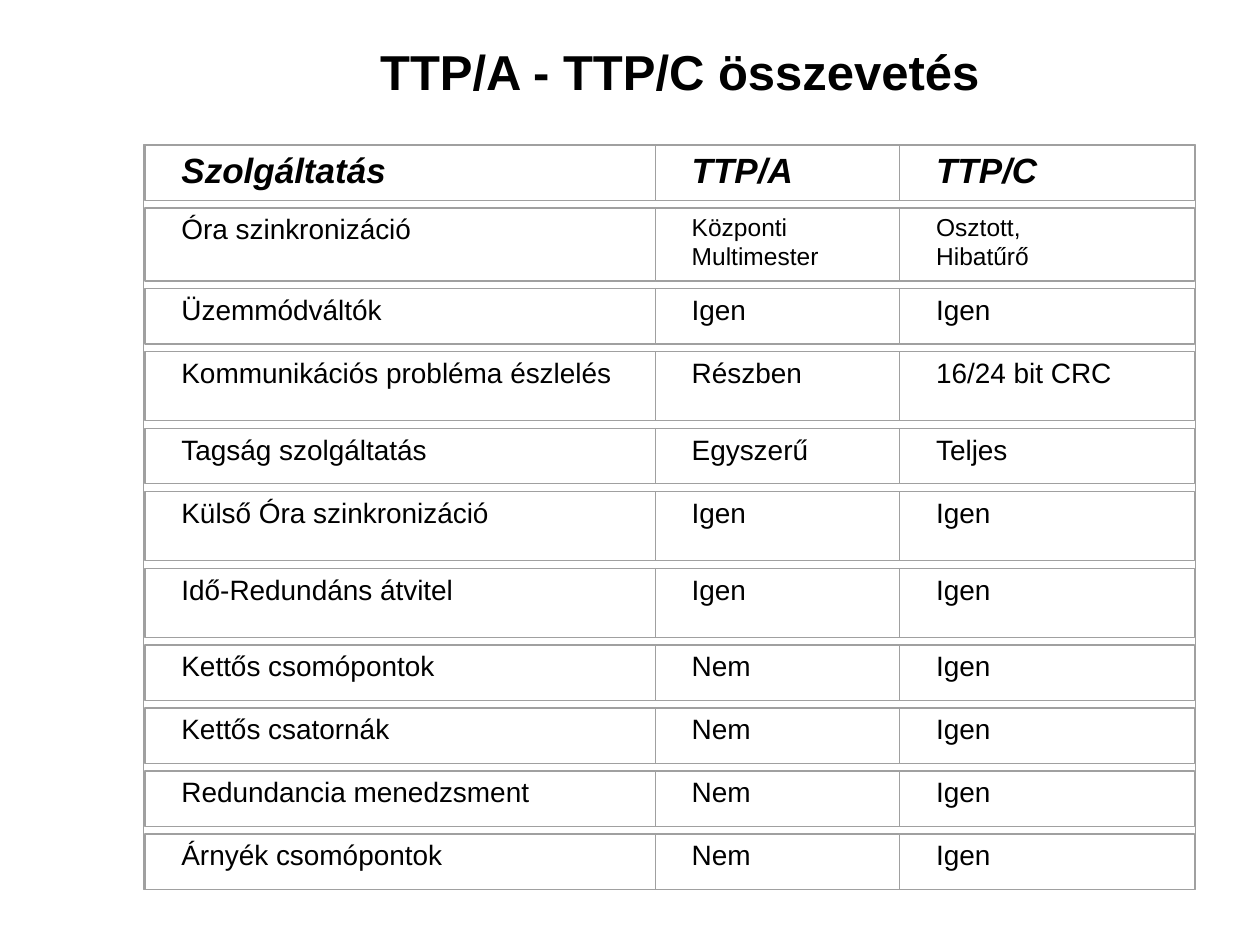
from dataclasses import dataclass

from pptx import Presentation
from pptx.dml.color import RGBColor
from pptx.enum.shapes import MSO_SHAPE as Preset
from pptx.enum.text import MSO_AUTO_SIZE as AutoSize, PP_ALIGN as Align
from pptx.util import Inches, Pt

BLACK = RGBColor(0x00, 0x00, 0x00)
GRAY = RGBColor(0xA0, 0xA0, 0xA0)
FONT = "Arial"

LEFT, TOP = 1.15, 1.15
COLUMN_WIDTHS = (4.05, 1.94, 2.34)
ROW_GAP = 0.06
LOW, TALL, TWO_LINE = 0.44, 0.55, 0.58
PAD_X, PAD_Y = 0.09, 0.03
TEXT_INDENT = 0.2


@dataclass(frozen=True)
class Box:
    left: float
    top: float
    width: float
    height: float

    def lengths(self) -> list:
        return [Inches(v) for v in (self.left, self.top, self.width, self.height)]

    def padded(self) -> "Box":
        return Box(self.left + PAD_X, self.top + PAD_Y,
                   self.width - 2 * PAD_X, self.height - 2 * PAD_Y)


@dataclass(frozen=True)
class Style:
    size: int
    bold: bool = False
    italic: bool = False


@dataclass(frozen=True)
class Service:
    name: str
    ttp_a: str
    ttp_c: str
    height: float = LOW
    name_style: Style = Style(16)
    value_style: Style = Style(16)

    def cells(self) -> tuple:
        return ((self.name, self.name_style),
                (self.ttp_a, self.value_style),
                (self.ttp_c, self.value_style))


TITLE = Style(28, bold=True)
HEADING = Style(20, bold=True, italic=True)

SERVICES = (
    Service("Szolgáltatás", "TTP/A", "TTP/C", LOW, HEADING, HEADING),
    Service("Óra szinkronizáció", "Központi\nMultimester", "Osztott,\nHibatűrő",
            TWO_LINE, value_style=Style(14)),
    Service("Üzemmódváltók", "Igen", "Igen"),
    Service("Kommunikációs probléma észlelés", "Részben", "16/24 bit CRC", TALL),
    Service("Tagság szolgáltatás", "Egyszerű", "Teljes"),
    Service("Külső Óra szinkronizáció", "Igen", "Igen", TALL),
    Service("Idő-Redundáns átvitel", "Igen", "Igen", TALL),
    Service("Kettős csomópontok", "Nem", "Igen"),
    Service("Kettős csatornák", "Nem", "Igen"),
    Service("Redundancia menedzsment", "Nem", "Igen"),
    Service("Árnyék csomópontok", "Nem", "Igen"),
)


def add_frame(shapes, box: Box, line_width: float) -> None:
    frame = shapes.add_shape(Preset.RECTANGLE, *box.lengths())
    frame.shadow.inherit = False
    frame.fill.background()
    frame.line.color.rgb = GRAY
    frame.line.width = Pt(line_width)


def add_text(shapes, box: Box, text: str, style: Style, align: Align = Align.LEFT):
    body = shapes.add_textbox(*box.lengths()).text_frame
    body.word_wrap = True
    for index, line in enumerate(text.split("\n")):
        paragraph = body.add_paragraph() if index else body.paragraphs[0]
        paragraph.alignment = align
        run = paragraph.add_run()
        run.text = line
        run.font.name = FONT
        run.font.size = Pt(style.size)
        run.font.bold = style.bold
        run.font.italic = style.italic
        run.font.color.rgb = BLACK
    return body


def add_cell(shapes, box: Box, text: str, style: Style) -> None:
    body = add_text(shapes, box.padded(), text, style)
    body.margin_left = Inches(TEXT_INDENT)
    body.margin_top = body.margin_right = body.margin_bottom = 0
    add_frame(shapes, box, 0)


def add_comparison(shapes) -> None:
    top = TOP
    for service in SERVICES:
        left = LEFT
        for (text, style), width in zip(service.cells(), COLUMN_WIDTHS):
            add_cell(shapes, Box(left, top, width, service.height), text, style)
            left += width
        top += service.height + ROW_GAP
    add_frame(shapes, Box(1.14, TOP, 8.35, top - ROW_GAP - TOP), 0.75)


def main() -> None:
    deck = Presentation()
    deck.slide_width, deck.slide_height = Inches(10), Inches(7.5)
    slide = deck.slides.add_slide(deck.slide_layouts[6])
    add_comparison(slide.shapes.add_group_shape().shapes)
    title = add_text(slide.shapes, Box(1.85, 0.28, 7.09, 0.57),
                     "TTP/A - TTP/C összevetés", TITLE, Align.CENTER)
    title.auto_size = AutoSize.SHAPE_TO_FIT_TEXT
    deck.save("out.pptx")


if __name__ == "__main__":
    main()
